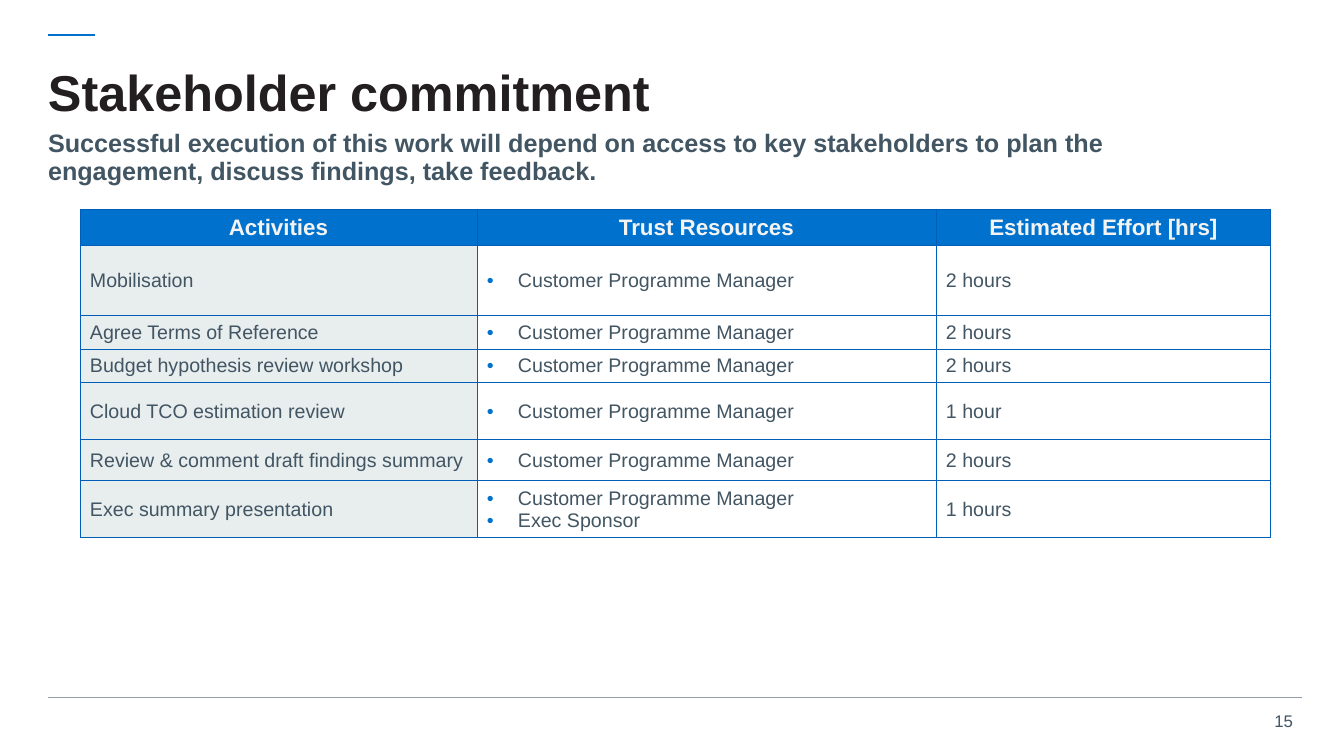
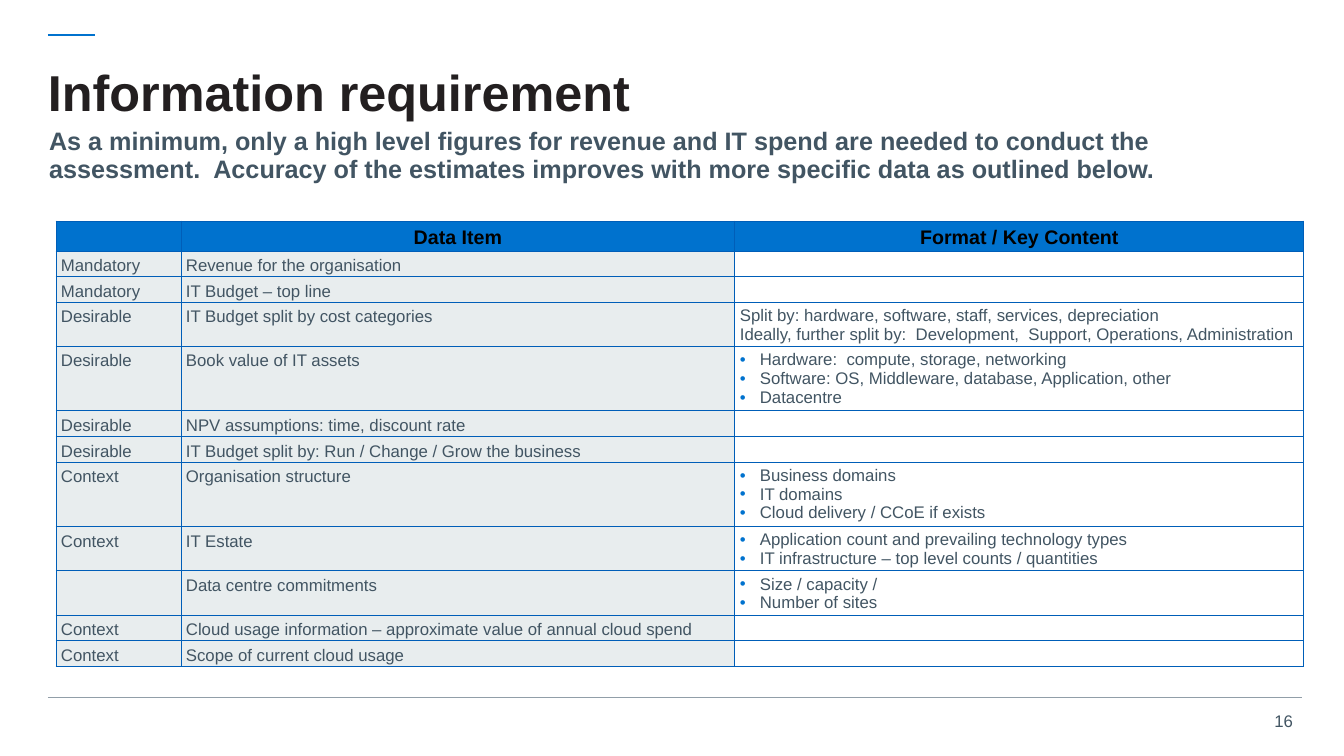
from lxml.etree import SubElement
from pptx import Presentation
from pptx.dml.color import RGBColor
from pptx.enum.shapes import MSO_CONNECTOR
from pptx.enum.text import MSO_ANCHOR, PP_ALIGN
from pptx.oxml.ns import qn
from pptx.util import Emu, Pt

SCALE = 914400 / 100.8
FONT = "Arial"
BLUE, EDGE, SLATE = "0072CE", "005EB8", "425563"
INK, RULE, PALE = "231F20", "919EA8", "E8EDEE"


def px(num):
    return Emu(round(num * SCALE))


def rgb(code):
    return RGBColor.from_string(code)


def paint(node, code):
    """Append a solid fill to an XML node."""
    fill = SubElement(node, qn("a:solidFill"))
    SubElement(fill, qn("a:srgbClr"), val=code)


def bullet(para, gap):
    props = para._p.get_or_add_pPr()
    props.set("marL", str(px(gap)))
    props.set("indent", str(-px(gap)))
    tint = SubElement(props, qn("a:buClr"))
    SubElement(tint, qn("a:srgbClr"), val=BLUE)
    SubElement(props, qn("a:buFont"), typeface=FONT)
    SubElement(props, qn("a:buChar"), char="•")


def write(frame, text, size=12, color=SLATE, bold=False, align=PP_ALIGN.LEFT,
          lead=None, after=0, gap=0):
    """Fill a frame; a list gives bulleted lines, a string plain ones."""
    listed = isinstance(text, list)
    for num, line in enumerate(text if listed else text.split("\n")):
        para = frame.add_paragraph() if num else frame.paragraphs[0]
        para.alignment = align
        para.space_after = Pt(after)
        if lead:
            para.line_spacing = lead
        if listed:
            bullet(para, gap)
        if not line:
            SubElement(para._p, qn("a:endParaRPr"), sz=str(size * 100))
            continue
        run = para.add_run()
        run.text = line
        font = run.font
        font.name, font.size, font.bold = FONT, Pt(size), bold
        font.color.rgb = rgb(color)


def label(slide, text, box, inset=(0, 0, 0, 0), anchor=MSO_ANCHOR.TOP, **form):
    frame = slide.shapes.add_textbox(*map(px, box)).text_frame
    frame.word_wrap = True
    frame.vertical_anchor = anchor
    pad(frame, inset)
    write(frame, text, **form)


def pad(part, inset):
    (part.margin_left, part.margin_top,
     part.margin_right, part.margin_bottom) = map(px, inset)


def rule(slide, left, right, top, color, width):
    line = slide.shapes.add_connector(
        MSO_CONNECTOR.STRAIGHT, px(left), px(top), px(right), px(top))
    line.line.color.rgb = rgb(color)
    line.line.width = Pt(width)
    SubElement(line._element.spPr, qn("a:effectLst"))


def border(cell):
    props = cell._tc.get_or_add_tcPr()
    for side in ("lnL", "lnR", "lnT", "lnB"):
        paint(SubElement(props, qn("a:" + side), w=str(Pt(0.75))), EDGE)


def grid(slide, spot, cols, rows, data, inset, head, body, side, shaded, middle):
    """Draw a table; head, side and body format its three zones."""
    box = (*spot, sum(cols), sum(rows))
    table = slide.shapes.add_table(len(rows), len(cols), *map(px, box)).table
    table.first_row = table.horz_banding = False
    for col, width in zip(table.columns, cols):
        col.width = px(width)
    for row, height in zip(table.rows, rows):
        row.height = px(height)
    for r, line in enumerate(data):
        for c, text in enumerate(line):
            cell = table.cell(r, c)
            tinted = c < shaded
            border(cell)
            pad(cell, inset)
            if r == 0 or middle:
                cell.vertical_anchor = MSO_ANCHOR.MIDDLE
            if r == 0 or tinted:
                cell.fill.solid()
                cell.fill.fore_color.rgb = rgb(PALE if r else BLUE)
            else:
                cell.fill.background()
            form = head if r == 0 else side if tinted else body
            write(cell.text_frame, text, **form)


def base(deck, title, lead, spot, page):
    """Add a slide with title, lead text, rules and page number."""
    slide = deck.slides.add_slide(deck.slide_layouts[6])
    rule(slide, 48, 95, 35, BLUE, 2)
    rule(slide, 48, 1302, 698, RULE, 0.75)
    label(slide, str(page), (1262, 706, 41, 30), (0, 5, 10, 5),
          align=PP_ALIGN.RIGHT)
    label(slide, title, (48, 47, 1257, 96), anchor=MSO_ANCHOR.MIDDLE,
          size=36, color=INK, bold=True, lead=0.9)
    label(slide, lead, (*spot, 1214, 63), size=18, bold=True, lead=0.92)
    return slide


def effort(deck):
    slide = base(
        deck, "Stakeholder commitment",
        "Successful execution of this work will depend on access to key "
        "stakeholders to plan the engagement, discuss findings, take feedback.",
        (48, 130), 15)
    boss = "Customer Programme Manager"
    data = [
        ("Activities", "Trust Resources", "Estimated Effort [hrs]"),
        ("Mobilisation", [boss], "2 hours"),
        ("Agree Terms of Reference", [boss], "2 hours"),
        ("Budget hypothesis review workshop", [boss], "2 hours"),
        ("Cloud TCO estimation review", [boss], "1 hour"),
        ("Review & comment draft findings summary", [boss], "2 hours"),
        ("Exec summary presentation", [boss, "Exec Sponsor"], "1 hours"),
    ]
    body = dict(size=14, gap=31)
    grid(slide, (80, 209), (397, 459, 335), (35, 70, 32, 32, 57, 41, 54), data,
         inset=(10, 5, 10, 5), body=body, side=body, shaded=1, middle=True,
         head=dict(size=16, color="F3F3F3", bold=True, align=PP_ALIGN.CENTER))


def needs(deck):
    slide = base(
        deck, "Information requirement",
        "As a minimum, only a high level figures for revenue and IT spend are "
        "needed to conduct the assessment.  Accuracy of the estimates improves "
        "with more specific data as outlined below.",
        (49, 128), 16)
    must, want, info = "Mandatory", "Desirable", "Context"
    data = [
        ("", "Data Item", "Format / Key Content"),
        (must, "Revenue for the organisation", ""),
        (must, "IT Budget – top line", ""),
        (want, "IT Budget split by cost categories",
         "Split by: hardware, software, staff, services, depreciation\n"
         "Ideally, further split by:  Development,  Support, Operations, "
         "Administration"),
        (want, "Book value of IT assets",
         ["Hardware:  compute, storage, networking",
          "Software: OS, Middleware, database, Application, other",
          "Datacentre"]),
        (want, "NPV assumptions: time, discount rate", ""),
        (want, "IT Budget split by: Run / Change / Grow the business", ""),
        (info, "Organisation structure",
         ["Business domains", "IT domains", "Cloud delivery / CCoE if exists"]),
        (info, "IT Estate",
         ["Application count and prevailing technology types",
          "IT infrastructure – top level counts / quantities"]),
        ("", "Data centre commitments", ["Size / capacity /", "Number of sites"]),
        (info, "Cloud usage information – approximate value of annual cloud spend",
         ""),
        (info, "Scope of current cloud usage", ""),
    ]
    grid(slide, (56, 221), (125, 554, 569),
         (30, 24, 24, 42, 60, 24, 24, 61, 41, 42, 24, 24), data,
         inset=(5, 4, 5, 0), body=dict(gap=20), side=dict(lead=1.07, after=8),
         shaded=2, middle=False,
         head=dict(size=14, color="000000", bold=True, align=PP_ALIGN.CENTER))


def main():
    deck = Presentation()
    deck.slide_width, deck.slide_height = px(1344), px(756)
    effort(deck)
    needs(deck)
    deck.save("out.pptx")


if __name__ == "__main__":
    main()
